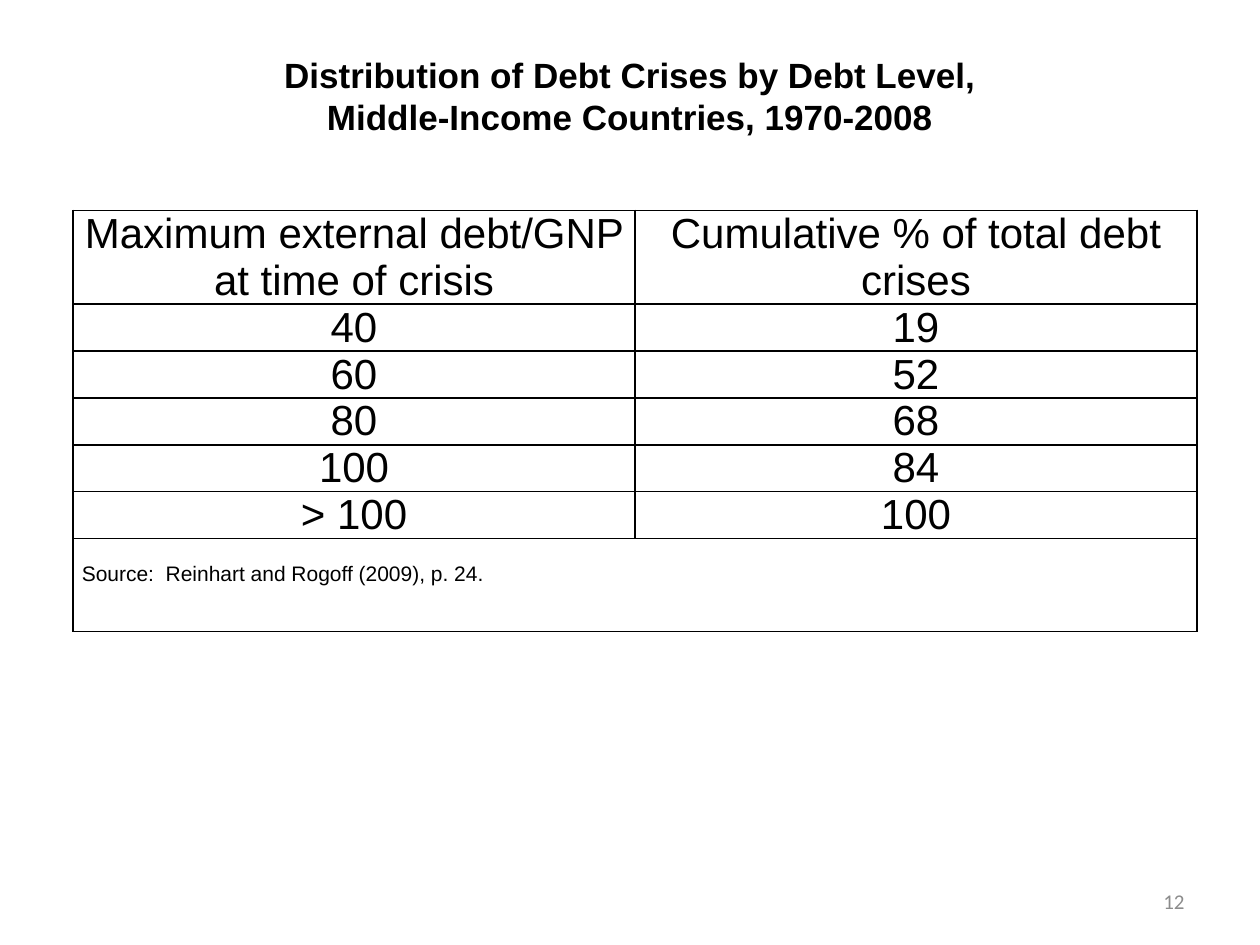
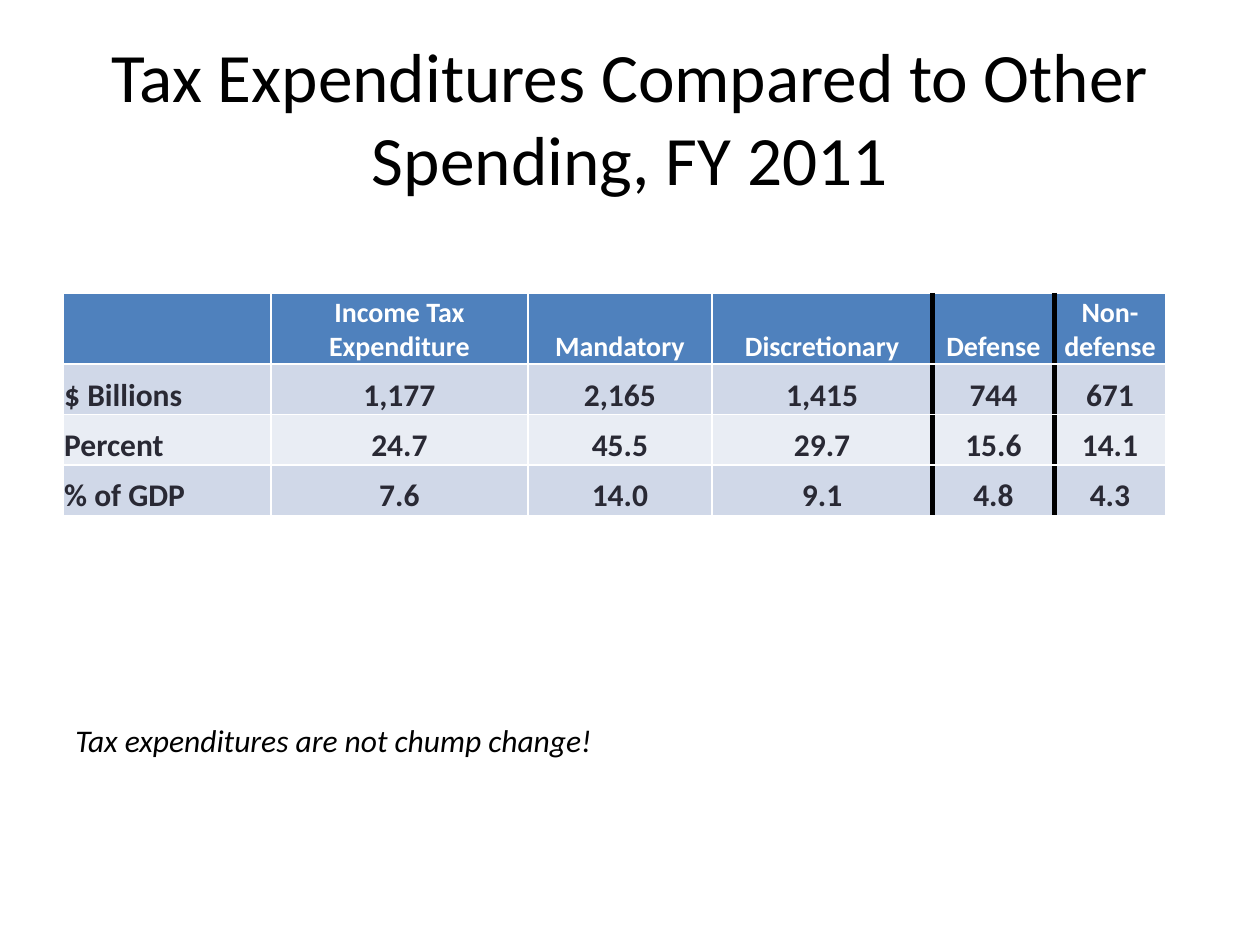
from dataclasses import dataclass

from lxml.etree import SubElement
from pptx import Presentation
from pptx.dml.color import RGBColor
from pptx.enum.text import MSO_ANCHOR, MSO_AUTO_SIZE, PP_ALIGN
from pptx.oxml.ns import qn
from pptx.util import Inches, Pt


@dataclass(frozen=True)
class Theme:
    """Fonts, colours and type sizes shared by the slides."""
    plain: str = "Arial"
    office: str = "Calibri"
    black: str = "000000"
    white: str = "FFFFFF"
    grey: str = "8C8C8C"
    ink: str = "292934"
    header: str = "4F81BD"
    bands: tuple = ("D0D8E8", "E9EDF4")
    title: float = 39.6
    small_title: int = 20
    large_cell: int = 24
    cell: int = 18
    header_cell: int = 16
    note: int = 12


T = Theme()

CRISES = [
    ("Maximum external debt/GNP at time of crisis", "Cumulative % of total debt crises"),
    ("40", "19"),
    ("60", "52"),
    ("80", "68"),
    ("100", "84"),
    ("> 100", "100"),
]
CRISES_SOURCE = "Source:  Reinhart and Rogoff (2009), p. 24."

SPENDING = [
    ("", "Income Tax Expenditure", "Mandatory", "Discretionary", "Defense", "Non-defense"),
    ("$ Billions", "1,177", "2,165", "1,415", "744", "671"),
    ("Percent", "24.7", "45.5", "29.7", "15.6", "14.1"),
    ("% of GDP", "7.6", "14.0", "9.1", "4.8", "4.3"),
]
SPENDING_COLS = [1.65, 2.04, 1.46, 1.75, 0.97, 0.88]
DEFENSE_COL = 4


def style_text(tf, size, font, color=T.black, align=PP_ALIGN.LEFT, bold=False, italic=False):
    """Format every paragraph and run of a text frame."""
    for p in tf.paragraphs:
        p.alignment = align
        for r in p.runs:
            r.font.size = Pt(size)
            r.font.name = font
            r.font.bold = bold
            r.font.italic = italic
            r.font.color.rgb = RGBColor.from_string(color)


def add_slide(prs, title, size, font, bold=False, bottom=0.05):
    """Add a slide with a centred title in the shared title position."""
    s = prs.slides.add_slide(prs.slide_layouts[5])
    sp = s.shapes.title
    sp.left, sp.top, sp.width, sp.height = (Inches(v) for v in (0.5, 0.3, 9, 1.25))
    tf = sp.text_frame
    tf.text = title
    tf.word_wrap = True
    tf.auto_size = MSO_AUTO_SIZE.NONE
    tf.vertical_anchor = MSO_ANCHOR.MIDDLE
    tf.margin_bottom = Inches(bottom)
    style_text(tf, size, font, align=PP_ALIGN.CENTER, bold=bold)
    return s


def add_text(s, text, box, size, anchor=MSO_ANCHOR.TOP, **style):
    """Add a wrapping text box in the office font."""
    tf = s.shapes.add_textbox(*(Inches(v) for v in box)).text_frame
    tf.text = text
    tf.word_wrap = True
    tf.vertical_anchor = anchor
    style_text(tf, size, T.office, **style)


def add_grid(s, left, top, cols, rows):
    """Add an unstyled table with the given column widths and row heights."""
    frame = s.shapes.add_table(len(rows), len(cols), Inches(left), Inches(top),
                               Inches(sum(cols)), Inches(sum(rows)))
    table = frame.table
    table.first_row = table.horz_banding = False
    for col, width in zip(table.columns, cols):
        col.width = Inches(width)
    for row, height in zip(table.rows, rows):
        row.height = Inches(height)
    return table


def set_borders(cell, color, **heavy):
    """Draw thin cell borders, with heavy ones on the sides given by colour."""
    tc_pr = cell._tc.get_or_add_tcPr()
    for side in "LRTB":
        width = 3 if side in heavy else 1
        ln = SubElement(tc_pr, qn(f"a:ln{side}"), w=str(Pt(width)))
        fill = SubElement(ln, qn("a:solidFill"))
        SubElement(fill, qn("a:srgbClr"), val=heavy.get(side, color))


def fill_cell(cell, text, margins, anchor=MSO_ANCHOR.TOP, fill=None, **style):
    """Write a cell and set its margins, fill and text style."""
    cell.text = text
    cell.margin_left, cell.margin_top, cell.margin_right, cell.margin_bottom = (
        Inches(m) for m in margins)
    cell.vertical_anchor = anchor
    if fill:
        cell.fill.solid()
        cell.fill.fore_color.rgb = RGBColor.from_string(fill)
    else:
        cell.fill.background()
    style_text(cell.text_frame, **style)


def add_crises_table(s):
    """Add the ruled table of debt crises with its source row."""
    table = add_grid(s, 0.58, 1.67, [4.46] * 2, [0.74] + [0.37] * 5 + [0.74])
    for cell in table.iter_cells():
        set_borders(cell, T.black)
    for i, row in enumerate(CRISES):
        for j, text in enumerate(row):
            fill_cell(table.cell(i, j), text, (0.07, 0, 0.07, 0), size=T.large_cell,
                      font=T.plain, align=PP_ALIGN.CENTER)
    last = len(CRISES)
    table.cell(last, 0).merge(table.cell(last, 1))
    fill_cell(table.cell(last, 0), CRISES_SOURCE, (0.07, 0.19, 0.07, 0),
              size=T.note, font=T.plain)


def add_spending_table(s):
    """Add the banded spending table with heavy rules around Defense."""
    table = add_grid(s, 0.5, 2.33, SPENDING_COLS, [0.56] + [0.4] * 3)
    for i, row in enumerate(SPENDING):
        is_header = i == 0
        for j, text in enumerate(row):
            cell = table.cell(i, j)
            heavy = {}
            if j in (DEFENSE_COL - 1, DEFENSE_COL):
                heavy["R"] = T.black
            if j in (DEFENSE_COL, DEFENSE_COL + 1):
                heavy["L"] = T.black
            set_borders(cell, T.white, **heavy)
            fill_cell(cell, text, (0.01, 0.01, 0.01, 0), MSO_ANCHOR.BOTTOM,
                      fill=T.header if is_header else T.bands[(i - 1) % 2],
                      size=T.header_cell if is_header else T.cell, font=T.office,
                      color=T.white if is_header else T.ink, bold=True,
                      align=PP_ALIGN.CENTER if j else PP_ALIGN.LEFT)


def main():
    """Build and save the two slides."""
    prs = Presentation()
    prs.slide_width, prs.slide_height = Inches(10), Inches(7.5)

    s = add_slide(prs, "Distribution of Debt Crises by Debt Level,\vMiddle-Income Countries, 1970-2008",
                  T.small_title, T.plain, bold=True, bottom=0.38)
    add_crises_table(s)
    add_text(s, "12", (7.17, 6.95, 2.33, 0.4), T.note, MSO_ANCHOR.MIDDLE,
             color=T.grey, align=PP_ALIGN.RIGHT)

    s = add_slide(prs, "Tax Expenditures Compared to Other Spending, FY 2011", T.title, T.office)
    add_spending_table(s)
    add_text(s, "Tax expenditures are not chump change!", (0.5, 5.67, 6, 0.4), T.cell, italic=True)

    prs.save("out.pptx")


if __name__ == "__main__":
    main()
